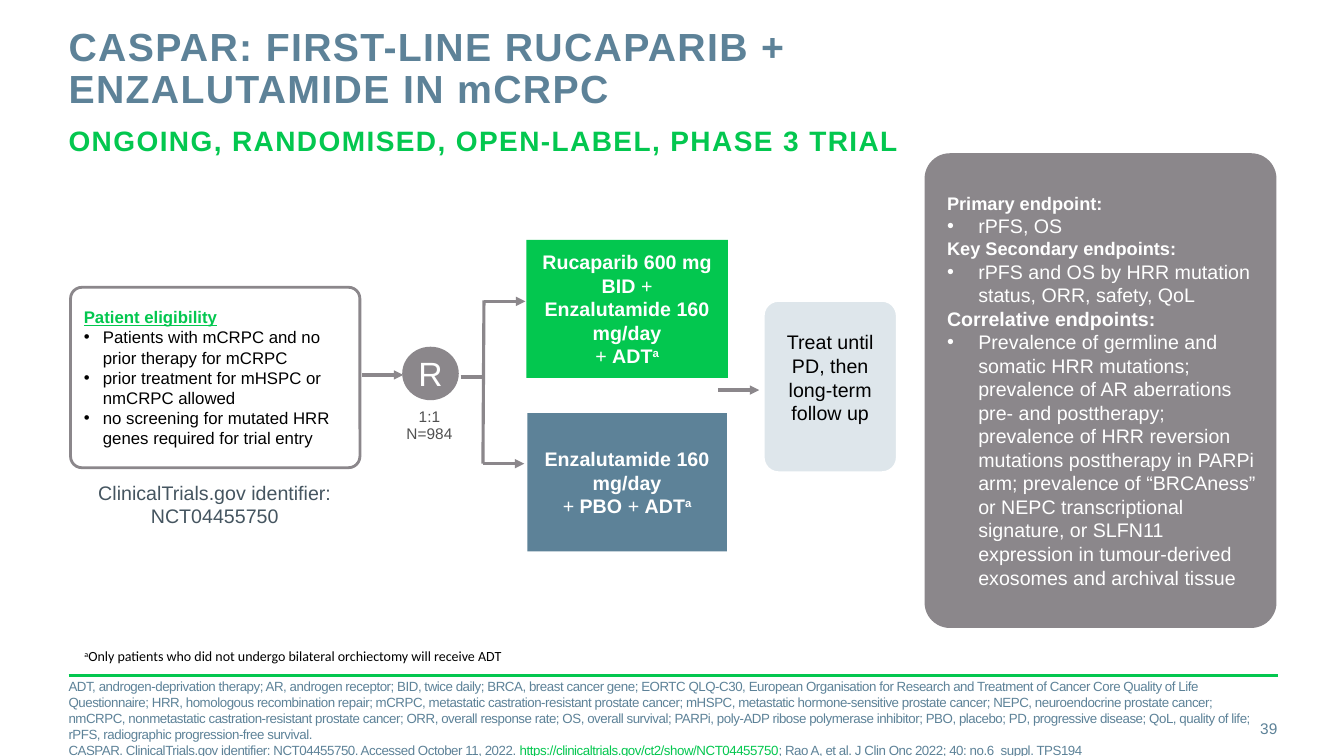
import dataclasses

import lxml.etree
import pptx
import pptx.dml.color
import pptx.enum.shapes
import pptx.enum.text
import pptx.oxml.ns
import pptx.util

Inches = pptx.util.Inches
Pt = pptx.util.Pt
Color = pptx.dml.color.RGBColor
Shape = pptx.enum.shapes.MSO_SHAPE
Align = pptx.enum.text.PP_ALIGN
Anchor = pptx.enum.text.MSO_ANCHOR

GREEN = Color(0x03, 0xC7, 0x4F)
BLUE = Color(0x5D, 0x82, 0x98)
GREY = Color(0x8B, 0x87, 0x8B)
PALE = Color(0xDE, 0xE6, 0xEB)
SLATE = Color(0x45, 0x55, 0x60)
DARK_GREY = Color(0x50, 0x50, 0x50)
WHITE = Color(0xFF, 0xFF, 0xFF)
BLACK = Color(0x00, 0x00, 0x00)

BREAK = "\n"
NO_INSETS = (0, 0, 0, 0)
BOX_INSETS = (0.1, 0.05, 0.1, 0.05)


@dataclasses.dataclass
class Span:
    text: str
    bold: bool = False
    underline: bool = False
    raised: bool = False
    size: float = 0
    color: Color = None


@dataclasses.dataclass
class Para:
    spans: list
    indent: float = 0


def add_child(parent, tag, **attributes):
    child = lxml.etree.SubElement(parent, pptx.oxml.ns.qn(tag))
    for name, value in attributes.items():
        child.set(name, value)


def write_text(box, paras, size, color, bold=False, align=Align.LEFT, anchor=Anchor.TOP,
               insets=BOX_INSETS, spacing=None, tracking=0, font="Arial", wrap=True):
    frame = box.text_frame
    frame.word_wrap = wrap
    frame.vertical_anchor = anchor
    frame.auto_size = pptx.enum.text.MSO_AUTO_SIZE.NONE
    (frame.margin_left, frame.margin_top,
     frame.margin_right, frame.margin_bottom) = map(Inches, insets)
    for index, item in enumerate(paras):
        if isinstance(item, str):
            item = Para([Span(item)])
        para = frame.paragraphs[0] if index == 0 else frame.add_paragraph()
        para.alignment = align
        para.space_before = Pt(0)
        if spacing:
            para.line_spacing = spacing
        if item.indent:
            props = para._p.get_or_add_pPr()
            props.set("marL", str(Inches(item.indent)))
            props.set("indent", str(-Inches(item.indent)))
            add_child(props, "a:buFont", typeface="Arial")
            add_child(props, "a:buChar", char="•")
        for span in item.spans:
            if span.text == BREAK:
                para.add_line_break()
                continue
            run = para.add_run()
            run.text = span.text
            run.font.name = font
            run.font.size = Pt(span.size or size)
            run.font.bold = bold or span.bold
            run.font.underline = span.underline
            run.font.color.rgb = span.color or color
            run_props = run._r.get_or_add_rPr()
            if tracking:
                run_props.set("spc", str(round(tracking * 100)))
            if span.raised:
                run_props.set("baseline", "30000")


def add_text(slide, place, paras, size, color, **options):
    box = slide.shapes.add_textbox(*map(Inches, place))
    write_text(box, paras, size, color, **options)


def add_box(slide, kind, place, paras, size, color, fill=None, line=None, line_width=2,
            corner=None, **options):
    box = slide.shapes.add_shape(kind, *map(Inches, place))
    box.shadow.inherit = False
    if corner:
        box.adjustments[0] = corner
    if fill is None:
        box.fill.background()
    else:
        box.fill.solid()
        box.fill.fore_color.rgb = fill
    if line is None:
        box.line.fill.background()
    else:
        box.line.color.rgb = line
        box.line.width = Pt(line_width)
    write_text(box, paras, size, color, anchor=Anchor.MIDDLE, **options)


def add_line(slide, start, end, color=GREY, width=2.25, arrow=False):
    line = slide.shapes.add_connector(
        pptx.enum.shapes.MSO_CONNECTOR.STRAIGHT, *map(Inches, start + end))
    line.line.color.rgb = color
    line.line.width = Pt(width)
    if arrow:
        add_child(line.line._get_or_add_ln(), "a:tailEnd", type="triangle")
    add_child(line._element.spPr, "a:effectLst")


def add_title(slide):
    title = slide.shapes.title
    title.left, title.top, title.width, title.height = map(Inches, (0.68, 0.27, 9.56, 0.88))
    write_text(title, ["CASPAR: FIRST-LINE RUCAPARIB + ENZALUTAMIDE IN mCRPC"], 28, BLUE,
               bold=True, insets=NO_INSETS, spacing=Pt(30), tracking=1)
    add_text(slide, (0.68, 1.22, 12, 0.55), ["ONGOING, RANDOMISED, OPEN-LABEL, PHASE 3 TRIAL"],
             20, GREEN, bold=True, insets=NO_INSETS, tracking=1)


def add_eligibility(slide):
    criteria = ["Patients with mCRPC and no prior therapy for mCRPC",
                "prior treatment for mHSPC or nmCRPC allowed",
                "no screening for mutated HRR genes required for trial entry"]
    heading = Para([Span("Patient eligibility", bold=True, underline=True, color=GREEN)])
    add_box(slide, Shape.ROUNDED_RECTANGLE, (0.7, 2.85, 2.87, 1.79),
            [heading] + [Para([Span(text)], indent=0.19) for text in criteria],
            12, BLACK, line=GREY, corner=0.063, insets=(0.1, 0.1, 0.1, 0.1))
    add_text(slide, (0.39, 4.72, 3.48, 0.57), ["ClinicalTrials.gov identifier:", "NCT04455750"],
             14, SLATE, align=Align.CENTER)


def add_randomisation(slide):
    add_box(slide, Shape.OVAL, (4, 3.45, 0.54, 0.51), ["R"], 24, WHITE, fill=GREY, line=GREY,
            line_width=1.5, insets=NO_INSETS, align=Align.CENTER)
    add_text(slide, (4.03, 4.06, 0.46, 0.33), ["1:1", "N=984"], 11, DARK_GREY,
             insets=NO_INSETS, align=Align.CENTER, spacing=0.9, wrap=False)
    add_line(slide, (4.57, 3.74), (4.79, 3.74))
    add_line(slide, (4.79, 4.6), (4.8, 2.98))
    for left, top in ((3.59, 3.72), (4.8, 2.99), (4.79, 4.6), (7.12, 3.87)):
        add_line(slide, (left, top), (left + 0.41, top), arrow=True)


def add_arms(slide):
    adt = [Span("ADT", bold=True), Span("a", bold=True, raised=True)]
    dose = [Span("Enzalutamide 160 mg/day", bold=True), Span(BREAK)]
    rucaparib = [Para([Span("Rucaparib 600 mg BID ", bold=True), Span("+")]),
                 Para(dose + [Span("+ ")] + adt)]
    placebo = [Para(dose + [Span("+"), Span(" PBO ", bold=True), Span("+ ")] + adt)]
    for place, paras, fill in (((5.22, 2.38, 2, 1.37), rucaparib, GREEN),
                               ((5.23, 4.1, 1.98, 1.37), placebo, BLUE)):
        add_box(slide, Shape.RECTANGLE, place, paras, 14, WHITE, fill=fill, align=Align.CENTER)
    add_box(slide, Shape.ROUNDED_RECTANGLE, (7.57, 2.98, 1.33, 1.71),
            ["Treat until PD, then long-term follow up"], 14, BLACK, fill=PALE, line=WHITE,
            corner=0.114, align=Align.CENTER, insets=(0.1, 0.05, 0.1, 0.23))


def add_endpoints(slide):
    endpoints = [
        ("Primary endpoint:", 13, "rPFS, OS"),
        ("Key Secondary endpoints:", 13, "rPFS and OS by HRR mutation status, ORR, safety, QoL"),
        ("Correlative endpoints:", 14,
         "Prevalence of germline and somatic HRR mutations; prevalence of AR aberrations "
         "pre- and posttherapy; prevalence of HRR reversion mutations posttherapy in PARPi arm; "
         "prevalence of “BRCAness” or NEPC transcriptional signature, or SLFN11 expression "
         "in tumour-derived exosomes and archival tissue")]
    paras = []
    for heading, size, detail in endpoints:
        paras += [Para([Span(heading, bold=True, size=size)]), Para([Span(detail)], indent=0.31)]
    add_box(slide, Shape.ROUNDED_RECTANGLE, (9.17, 1.52, 3.49, 4.71), paras, 14, WHITE,
            fill=GREY, corner=0.072, insets=(0.15, 0.05, 0.08, 0.05))


def add_footer(slide):
    footnote = Para([Span("a", raised=True),
                     Span("Only patients who did not undergo bilateral orchiectomy will receive ADT")])
    add_text(slide, (0.79, 6.44, 4.23, 0.3), [footnote], 10, BLACK, font="Calibri",
             insets=NO_INSETS, align=Align.CENTER, spacing=0.9, wrap=False)
    add_line(slide, (0.68, 6.7), (12.68, 6.7), GREEN, 2)
    abbreviations = (
        "ADT, androgen-deprivation therapy; AR, androgen receptor; BID, twice daily; BRCA, breast "
        "cancer gene; EORTC QLQ-C30, European Organisation for Research and Treatment of Cancer "
        "Core Quality of Life Questionnaire; HRR, homologous recombination repair; mCRPC, "
        "metastatic castration-resistant prostate cancer; mHSPC, metastatic hormone-sensitive "
        "prostate cancer; NEPC, neuroendocrine prostate cancer; nmCRPC, nonmetastatic "
        "castration-resistant prostate cancer; ORR, overall response rate; OS, overall survival; "
        "PARPi, poly-ADP ribose polymerase inhibitor; PBO, placebo; PD, progressive disease; "
        "QoL, quality of life; rPFS, radiographic progression-free survival.")
    reference = Para([
        Span("CASPAR. ClinicalTrials.gov identifier: NCT04455750. Accessed October 11, 2022. "),
        Span("https://clinicaltrials.gov/ct2/show/NCT04455750", underline=True, color=GREEN),
        Span("; Rao A, et al. J Clin Onc 2022; 40: no.6_suppl. TPS194")])
    add_text(slide, (0.68, 6.73, 11.8, 0.77), [abbreviations, reference], 9.5, BLUE,
             insets=NO_INSETS, tracking=-0.3)
    add_text(slide, (11.81, 7.03, 0.86, 0.4), ["39"], 11, BLUE, insets=NO_INSETS,
             align=Align.RIGHT, anchor=Anchor.MIDDLE)


def main():
    deck = pptx.Presentation()
    deck.slide_width, deck.slide_height = Inches(13.33), Inches(7.5)
    slide = deck.slides.add_slide(deck.slide_layouts[5])
    for add_part in (add_title, add_endpoints, add_arms, add_eligibility,
                     add_randomisation, add_footer):
        add_part(slide)
    deck.save("out.pptx")


if __name__ == "__main__":
    main()
